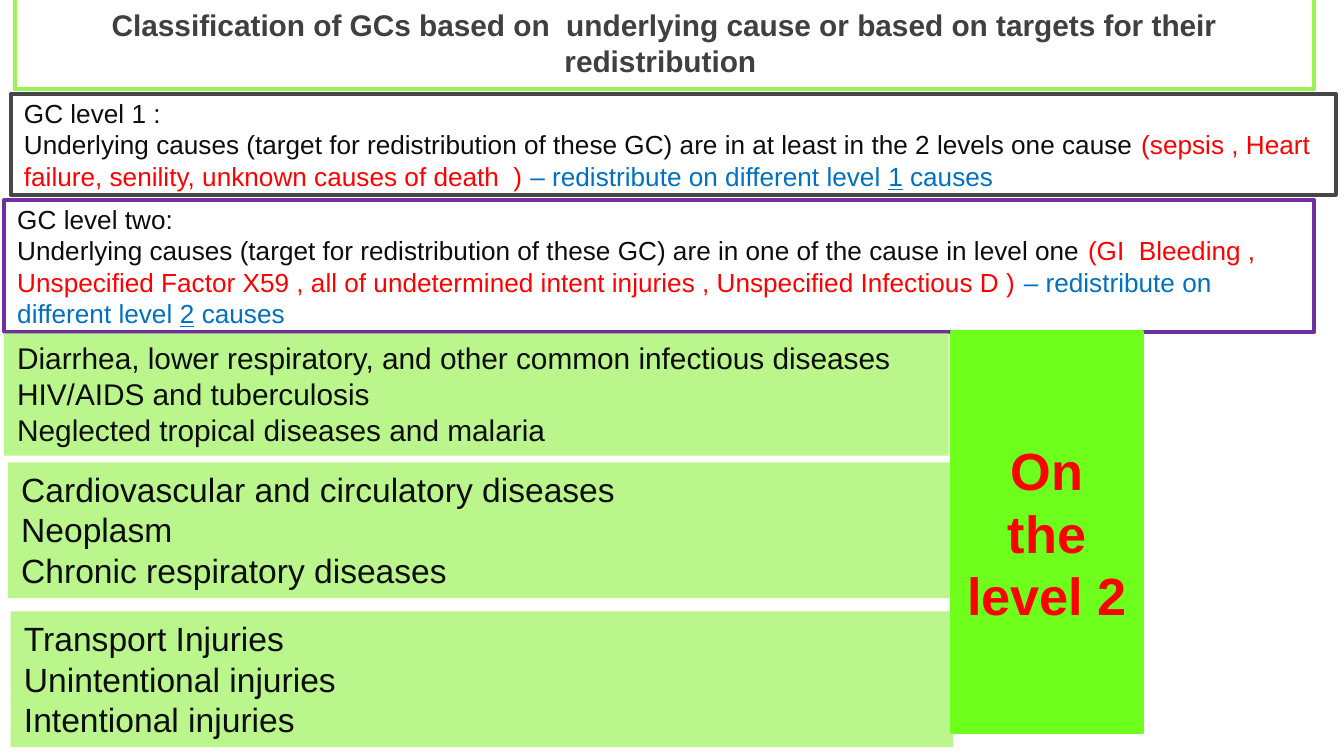
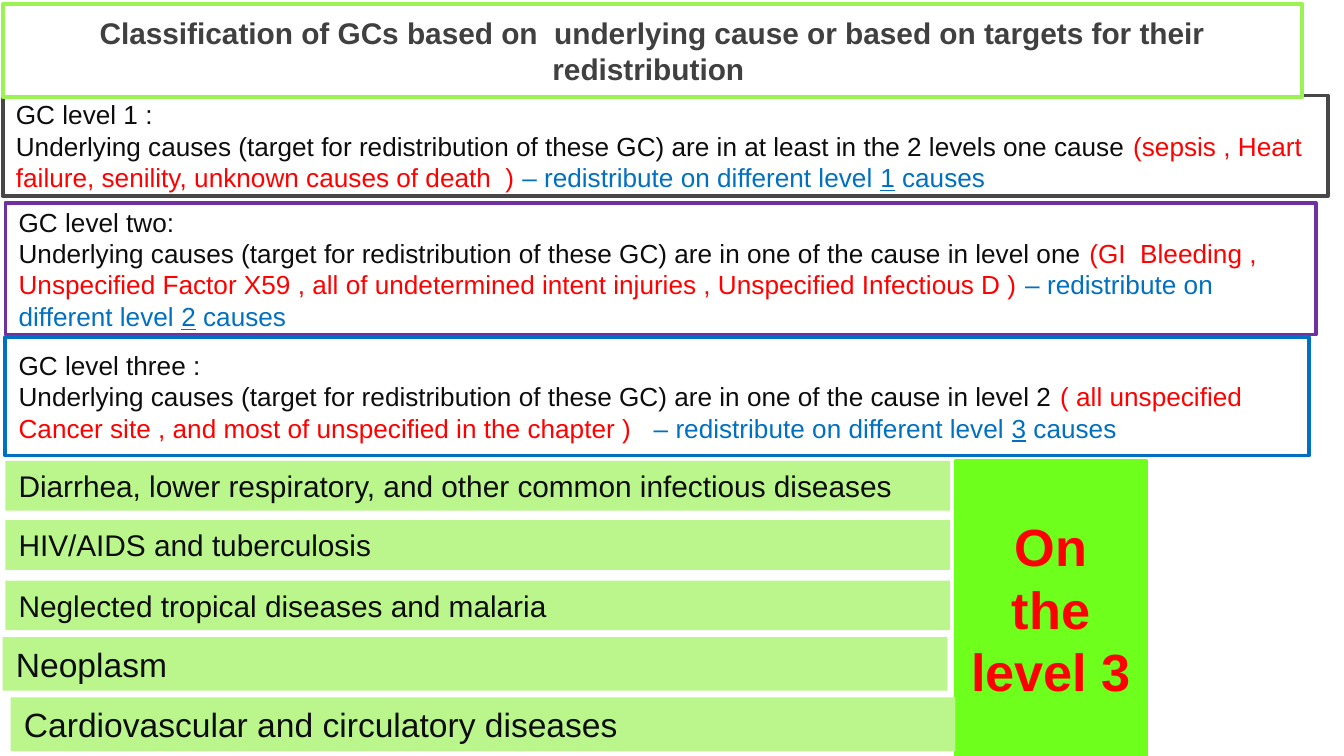
from pptx import Presentation
from pptx.dml.color import RGBColor
from pptx.enum.shapes import MSO_SHAPE
from pptx.enum.text import MSO_ANCHOR, MSO_AUTO_SIZE, PP_ALIGN
from pptx.util import Inches, Pt

# Shared colours and text formats
INK, RED, BLUE = "0D0D0D", "FF0000", "0070C0"
WHITE, PALE, LIME, VIVID = "FFFFFF", "BBF68C", "9AF253", "6EFF1D"
GREY, PURPLE = "474747", "7030A0"
BASE = {"name": "Arial", "size": Pt(14), "bold": False, "underline": False}
HEAD = BASE | {"size": Pt(16), "bold": True}
BIG = BASE | {"size": Pt(28), "bold": True}

TITLE = ("Classification of GCs based on  underlying cause or based on "
         "targets for their redistribution ")
CAUSE = "Underlying causes (target for redistribution of these GC) are in "

# Level: heading, target, examples, digit, border colour
LEVELS = [
    ("GC level 1 :", "at least in the 2 levels one cause ",
     "(sepsis , Heart failure, senility, unknown causes of death  ) ",
     "1", GREY),
    ("GC level two:", "one of the cause in level one ",
     "(GI  Bleeding , Unspecified Factor X59 , all of undetermined intent "
     "injuries , Unspecified Infectious D ) ", "2", PURPLE),
    ("GC level three :", "one of the cause in level 2 ",
     "( all unspecified Cancer site , and most of unspecified in the "
     "chapter )   ", "3", BLUE),
]

COMMON = ["Diarrhea, lower respiratory, and other common infectious diseases",
          "HIV/AIDS and tuberculosis",
          "Neglected tropical diseases and malaria"]
HEART, TUMOR = "Cardiovascular and circulatory diseases", "Neoplasm"


def color(code):
    return RGBColor.from_string(code)


def place(shape, at):
    for side, val in zip(("left", "top", "width", "height"), at):
        setattr(shape, side, Inches(val))


def paint(shape, fill, edge=None):
    shape.fill.solid()
    shape.fill.fore_color.rgb = color(fill)
    if edge:
        shape.line.color.rgb = color(edge)
        shape.line.width = Pt(2)
    else:
        shape.line.fill.background()


def write(shape, paras, style, align=PP_ALIGN.LEFT, grow=False):
    """Each paragraph is a list of (text, colour, extra format) runs."""
    frame = shape.text_frame
    size = MSO_AUTO_SIZE.SHAPE_TO_FIT_TEXT if grow else MSO_AUTO_SIZE.NONE
    form = {"word_wrap": True, "auto_size": size,
            "vertical_anchor": MSO_ANCHOR.TOP if grow else MSO_ANCHOR.MIDDLE}
    for key, val in form.items():
        setattr(frame, key, val)
    for num, runs in enumerate(paras):
        para = frame.add_paragraph() if num else frame.paragraphs[0]
        para.alignment = align
        for text, tint, extra in runs:
            run = para.add_run()
            run.text = text
            for key, val in (style | extra).items():
                setattr(run.font, key, val)
            run.font.color.rgb = color(tint)


def add_box(slide, at, fill, edge=None):
    box = slide.shapes.add_shape(MSO_SHAPE.RECTANGLE, *map(Inches, at))
    box.shadow.inherit = False
    paint(box, fill, edge)
    return box


def add_title(slide, left, top):
    title = slide.shapes.title
    place(title, (left, top, 9.67, 0.69))
    paint(title, WHITE, LIME)
    write(title, [[(TITLE, "404040", {})]], HEAD, PP_ALIGN.CENTER)
    # Bring the title in front of the level boxes
    title.element.getparent().append(title.element)


def add_level(slide, level, at):
    head, goal, cases, digit, edge = level
    box = add_box(slide, at, WHITE, edge)
    write(box, [[(head, INK, {})],
                [(CAUSE + goal, INK, {}), (cases, RED, {}),
                 ("– redistribute on different level ", BLUE, {}),
                 (digit, BLUE, {"underline": True}),
                 (" causes", BLUE, {})]], BASE)


def add_list(slide, lines, at, size):
    box = add_box(slide, at, PALE)
    paras = [[(line, INK, {})] for line in lines]
    write(box, paras, BASE | {"size": Pt(size)}, grow=True)


def add_panel(slide, digit, at):
    box = add_box(slide, at, VIVID, VIVID)
    write(box, [[(f"On the level {digit}", RED, {})]], BIG, PP_ALIGN.CENTER)


def main():
    deck = Presentation()
    # Widescreen 16:9
    deck.slide_width = Inches(10)
    deck.slide_height = Inches(10) * 9 // 16
    layout = deck.slide_layouts[5]

    # Slide 1: targets on level 2
    slide = deck.slides.add_slide(layout)
    spots = [(0.08, 0.7, 9.86, 0.75), (0.03, 1.49, 9.75, 0.98)]
    for level, at in zip(LEVELS, spots):
        add_level(slide, level, at)
    add_title(slide, 0.11, -0.03)
    add_list(slide, COMMON, (0.03, 2.48, 7.03, 0.91), 16)
    add_list(slide, [HEART, TUMOR, "Chronic respiratory diseases"],
             (0.06, 3.44, 7.03, 1.01), 18)
    add_list(slide, ["Transport Injuries", "Unintentional injuries",
                     "Intentional injuries"], (0.08, 4.55, 7.01, 1.01), 18)
    add_panel(slide, 2, (7.08, 2.47, 1.42, 2.98))

    # Slide 2: targets on level 3
    slide = deck.slides.add_slide(layout)
    spots = [(0.02, 0.71, 9.86, 0.75), (0.04, 1.51, 9.75, 0.98),
             (0.04, 2.51, 9.7, 0.88)]
    for level, at in zip(LEVELS, spots):
        add_level(slide, level, at)
    add_title(slide, 0.02, 0.03)
    add_panel(slide, 3, (7.11, 3.43, 1.42, 2.19))
    for line, top in zip(COMMON, (3.43, 3.87, 4.32)):
        add_list(slide, [line], (0.04, top, 7.03, 0.37), 16)
    add_list(slide, [HEART], (0.08, 5.19, 7.03, 0.4), 18)
    add_list(slide, [TUMOR], (0.02, 4.74, 7.03, 0.4), 18)

    deck.save("out.pptx")


if __name__ == "__main__":
    main()
